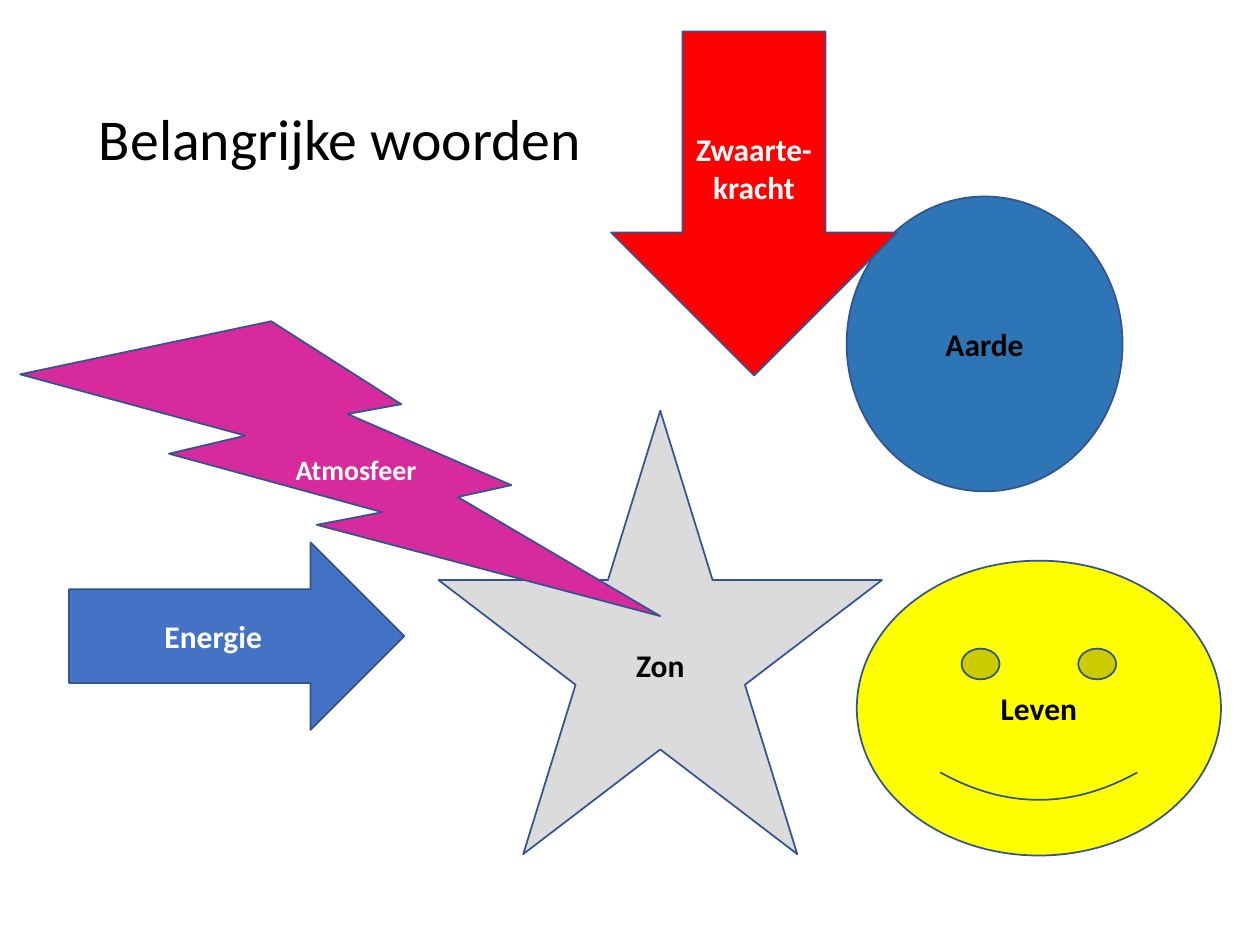
from pptx import Presentation
from pptx import util as u
from pptx.dml.color import RGBColor
from pptx.enum import shapes, text

KIND = shapes.MSO_SHAPE
BLACK, WHITE, OUTLINE = "000000", "FFFFFF", "325491"

WORDS = [
    ("Aarde", KIND.OVAL, (483.8, 112.3, 157.7, 168.5), "2E75B6", BLACK, 18),
    ("Energie", KIND.RIGHT_ARROW, (39.5, 310, 191.5, 107), "4472C4", WHITE, 18),
    ("Zwaarte-kracht", KIND.DOWN_ARROW, (349.2, 18, 163.4, 196.6), "FF0000", WHITE, 18),
    ("Zon", KIND.STAR_5_POINT, (250.6, 234.7, 253.4, 253.4), "DBDBDB", BLACK, 18),
    ("Atmosfeer", KIND.LIGHTNING_BOLT, (11.5, 183.6, 365.8, 168.5), "D62A9D", WHITE, 16),
    ("Leven", KIND.SMILEY_FACE, (489.6, 320.4, 208.1, 168.5), "FFFF00", BLACK, 18),
]


def color(value):
    return RGBColor.from_string(value)


def write(frame, words, size, ink, bold=False):
    frame.word_wrap = True
    frame.vertical_anchor = text.MSO_ANCHOR.MIDDLE
    paragraph = frame.paragraphs[0]
    run = paragraph.add_run()
    run.text = words
    run.font.name = "Calibri"
    run.font.size = u.Pt(size)
    run.font.bold = bold
    run.font.color.rgb = color(ink)
    return paragraph


def add_heading(slide, box, words):
    heading = slide.shapes.add_textbox(*map(u.Pt, box))
    paragraph = write(heading.text_frame, words, 33, BLACK)
    paragraph.line_spacing = 0.9


def add_word(slide, box, word, kind, fill, ink, size):
    figure = slide.shapes.add_shape(kind, *map(u.Pt, box))
    figure.shadow.inherit = False
    figure.fill.solid()
    figure.fill.fore_color.rgb = color(fill)
    figure.line.color.rgb = color(OUTLINE)
    figure.line.width = u.Pt(1)
    paragraph = write(figure.text_frame, word, size, ink, bold=True)
    paragraph.alignment = text.PP_ALIGN.CENTER


def main():
    deck = Presentation()
    deck.slide_width, deck.slide_height = u.Pt(720), u.Pt(540)
    slide = deck.slides.add_slide(deck.slide_layouts[6])
    add_heading(slide, (49.5, 28.8, 621, 104.4), "Belangrijke woorden")
    for word, kind, box, fill, ink, size in WORDS:
        add_word(slide, box, word, kind, fill, ink, size)
    deck.save("out.pptx")


if __name__ == "__main__":
    main()
